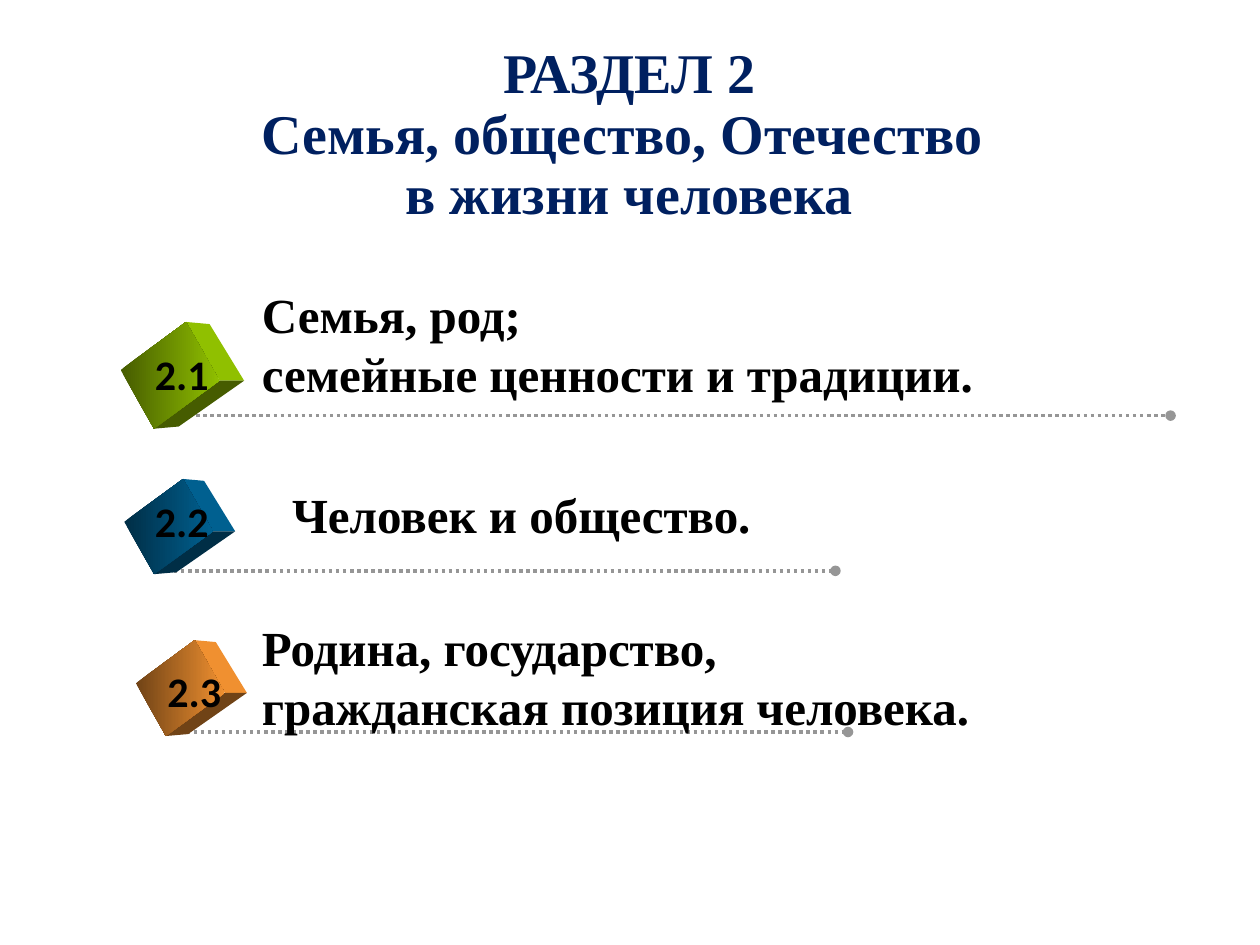
from lxml import etree
from pptx import Presentation
from pptx.dml.color import RGBColor
from pptx.enum.dml import MSO_LINE
from pptx.enum.shapes import MSO_CONNECTOR
from pptx.enum.text import MSO_ANCHOR, MSO_AUTO_SIZE, PP_ALIGN
from pptx.oxml.ns import qn
from pptx.util import Pt

STRAIGHT = MSO_CONNECTOR.STRAIGHT
DOTTED = MSO_LINE.ROUND_DOT
MIDDLE, CENTER, NO_AUTOFIT = MSO_ANCHOR.MIDDLE, PP_ALIGN.CENTER, MSO_AUTO_SIZE.NONE

TITLE_FONT = {"name": "Times New Roman", "size": Pt(32), "bold": True}
TOPIC_FONT = {"name": "Times New Roman", "size": Pt(28), "bold": True}
NUMBER_FONT = {"name": "Calibri", "size": Pt(24), "bold": True}

# Cube faces as fractions of the cube's box
FRONT = [(0, 0.45), (0.53, 0), (0.8, 0.55), (0.27, 1)]
SIDE = [(0.53, 0), (0.72, 0.02), (1, 0.55), (0.8, 0.55)]
BASE = [(0.27, 1), (0.8, 0.55), (1, 0.55), (0.47, 0.98)]

# Boxes are left, top, width, height; a rule is left, right, y; all in points
SECTIONS = [
    {"number": "2.1", "topic": ["Семья, род;", "семейные ценности и традиции."],
     "light": "90C000", "dark": "465C00", "cube": (69, 184, 70.5, 61),
     "number_box": (81.4, 195.8, 48, 36.7), "rule": (108, 668.9, 237.5),
     "topic_box": (142.6, 159.1, 424.8, 74.9)},
    {"number": "2.2", "topic": ["Человек и общество."],
     "light": "006090", "dark": "002E46", "cube": (71, 273.7, 63.4, 54.4),
     "number_box": (81.4, 279.4, 48, 36.7), "rule": (99.4, 477.4, 326.2),
     "topic_box": (159.8, 273.6, 279.4, 41)},
    {"number": "2.3", "topic": ["Родина, государство,", "гражданская позиция человека."],
     "light": "F09030", "dark": "704316", "cube": (77.7, 365.8, 63.4, 54.8),
     "number_box": (88.6, 376.6, 48, 36.7), "rule": (106.6, 484.6, 418.3),
     "topic_box": (142.6, 349.2, 540, 74.9)},
]


def color(hex_value):
    return RGBColor.from_string(hex_value)


def place(shape, box):
    for side, value in zip(("left", "top", "width", "height"), box):
        setattr(shape, side, Pt(value))


def format_font(font, values, hex_value):
    for key, value in values.items():
        setattr(font, key, value)
    font.color.rgb = color(hex_value)


def add_title(slide, box):
    title = slide.shapes.title
    place(title, box)
    frame = title.text_frame
    frame.text = "РАЗДЕЛ 2\vСемья, общество, Отечество \vв жизни человека"
    frame.auto_size = NO_AUTOFIT
    frame.vertical_anchor = MIDDLE
    paragraph = frame.paragraphs[0]
    paragraph.alignment = CENTER
    paragraph.line_spacing = 0.9
    for run in paragraph.runs:
        format_font(run.font, TITLE_FONT, "002060")


def add_text(slide, box, lines, font_values):
    text_box = slide.shapes.add_textbox(*map(Pt, box))
    frame = text_box.text_frame
    frame.word_wrap = True
    frame.text = "\n".join(lines)
    for paragraph in frame.paragraphs:
        format_font(paragraph.font, font_values, "000000")


def add_rule(slide, left, right, y):
    """Dotted line that ends in a round dot."""
    rule = slide.shapes.add_connector(STRAIGHT, Pt(left), Pt(y), Pt(right), Pt(y))
    rule.line.color.rgb = color("969696")
    rule.line.width = Pt(2)
    rule.line.dash_style = DOTTED
    properties = rule.line._get_or_add_ln()
    etree.SubElement(properties, qn("a:tailEnd"), type="oval")
    etree.SubElement(properties.getparent(), qn("a:effectLst"))


def add_face(slide, box, corners):
    left, top, width, height = box
    points = [(Pt(left + x * width), Pt(top + y * height)) for x, y in corners]
    builder = slide.shapes.build_freeform(*points[0])
    builder.add_line_segments(points[1:], close=True)
    face = builder.convert_to_shape()
    face.shadow.inherit = False
    face.line.fill.background()
    return face


def add_cube(slide, box, light, dark):
    for corners, hex_value in ((SIDE, light), (BASE, dark)):
        fill = add_face(slide, box, corners).fill
        fill.solid()
        fill.fore_color.rgb = color(hex_value)
    front = add_face(slide, box, FRONT).fill
    front.gradient()
    front.gradient_angle = 0
    for stop, hex_value in zip(front.gradient_stops, (dark, light)):
        stop.color.rgb = color(hex_value)


def add_section(slide, section):
    add_rule(slide, *section["rule"])
    add_cube(slide, section["cube"], section["light"], section["dark"])
    add_text(slide, section["number_box"], [section["number"]], NUMBER_FONT)
    add_text(slide, section["topic_box"], section["topic"], TOPIC_FONT)


def main():
    presentation = Presentation()
    presentation.slide_width, presentation.slide_height = Pt(720), Pt(540)
    slide = presentation.slides.add_slide(presentation.slide_layouts.get_by_name("Title Only"))
    add_title(slide, (49, 42.5, 621.4, 70.6))
    for section in SECTIONS:
        add_section(slide, section)
    presentation.save("out.pptx")


if __name__ == "__main__":
    main()
